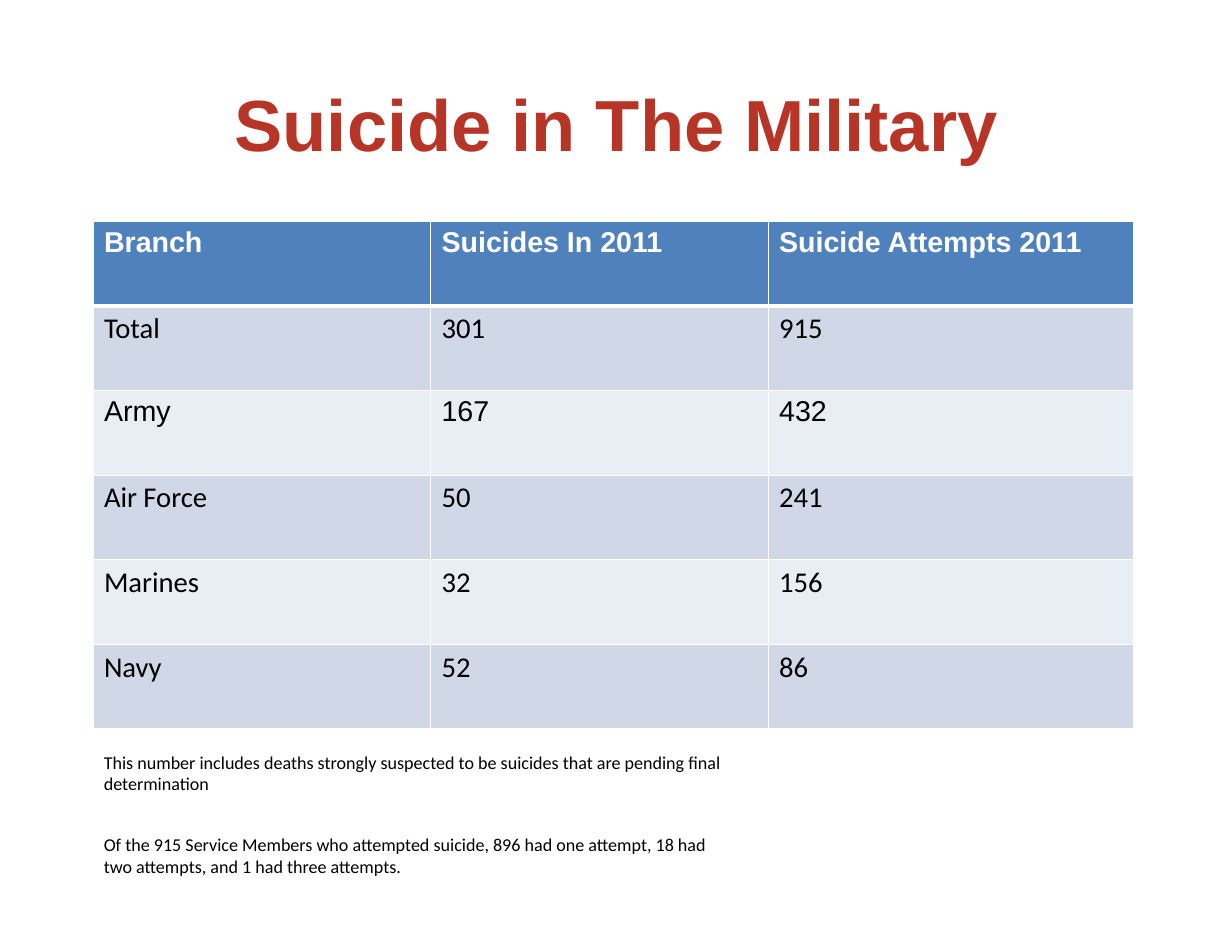
from lxml.etree import SubElement
from pptx import Presentation
from pptx.dml.color import RGBColor
from pptx.enum.text import MSO_ANCHOR, MSO_AUTO_SIZE, PP_ALIGN
from pptx.oxml.ns import qn
from pptx.util import Cm, Pt

COLORS = {
    "title": "B73526",
    "header": "4F81BD",
    "band_dark": "D0D8E8",
    "band_light": "E9EDF4",
    "text": "000000",
    "white": "FFFFFF",
}
BRANCH_ROWS = [
    ("Branch", "Suicides In 2011", "Suicide Attempts 2011"),
    ("Total", "301", "915"),
    ("Army", "167", "432"),
    ("Air Force", "50", "241"),
    ("Marines", "32", "156"),
    ("Navy", "52", "86"),
]
COLUMN_WIDTHS = (7.9, 7.9, 8.55)
ROW_HEIGHT = 1.98
LEFT = 2.18
NOTES = [
    (17.45, 15.11, "This number includes deaths strongly suspected to be suicides "
                   "that are pending final\ndetermination"),
    (19.38, 14.81, "Of the 915 Service Members who attempted suicide, 896 had one "
                   "attempt, 18 had\ntwo attempts, and 1 had three attempts."),
]


class PageBuilder:
    """Holds the text style and the current page."""

    def __init__(self, page):
        self.page = page
        self.heading_font = "Arial"
        self.body_font = "Calibri"

    def format_text(self, frame, name, size, color, bold=False):
        """Format every run of a text frame."""
        for para in frame.paragraphs:
            for span in para.runs:
                span.font.name = name
                span.font.size = Pt(size)
                span.font.bold = bold
                span.font.color.rgb = RGBColor.from_string(COLORS[color])

    def title(self, text, left, top, width, height):
        """Fill and place the title placeholder."""
        box = self.page.shapes.title
        box.left, box.top, box.width, box.height = map(Cm, (left, top, width, height))
        frame = box.text_frame
        frame.text = text
        frame.vertical_anchor = MSO_ANCHOR.MIDDLE
        frame.paragraphs[0].alignment = PP_ALIGN.CENTER
        self.format_text(frame, self.heading_font, 48, "title", bold=True)

    def border(self, cell, bottom_width):
        """Draw white lines around a cell."""
        properties = cell._tc.get_or_add_tcPr()
        widths = {"a:lnL": 1, "a:lnR": 1, "a:lnT": 1, "a:lnB": bottom_width}
        for index, (side, width) in enumerate(widths.items()):
            line = SubElement(properties, qn(side), w=str(Pt(width)))
            fill = SubElement(line, qn("a:solidFill"))
            SubElement(fill, qn("a:srgbClr"), val=COLORS["white"])
            properties.insert(index, line)

    def table(self, rows, left, top, widths, row_height):
        """Add a table with a header and banded rows."""
        table = self.page.shapes.add_table(
            len(rows), len(widths), Cm(left), Cm(top),
            Cm(sum(widths)), Cm(row_height * len(rows))).table
        for column, width in zip(table.columns, widths):
            column.width = Cm(width)
        for number, values in enumerate(rows):
            table.rows[number].height = Cm(row_height)
            is_header = number == 0
            band = "band_dark" if number % 2 else "band_light"
            in_heading_font = is_header or values[0] == "Army"
            for cell, value in zip(table.rows[number].cells, values):
                cell.text_frame.text = value
                cell.fill.solid()
                cell.fill.fore_color.rgb = RGBColor.from_string(
                    COLORS["header" if is_header else band])
                self.border(cell, 3 if is_header else 1)
                self.format_text(
                    cell.text_frame,
                    self.heading_font if in_heading_font else self.body_font,
                    19, "white" if is_header else "text", bold=is_header)

    def note(self, text, left, top, width, height):
        """Add a small text box with one paragraph per line."""
        box = self.page.shapes.add_textbox(*map(Cm, (left, top, width, height)))
        frame = box.text_frame
        frame.text = text
        frame.word_wrap = False
        frame.auto_size = MSO_AUTO_SIZE.SHAPE_TO_FIT_TEXT
        self.format_text(frame, self.body_font, 12, "text")


def main():
    """Build the slide and save the deck."""
    deck = Presentation()
    deck.slide_width, deck.slide_height = Cm(28.83), Cm(22.23)
    builder = PageBuilder(deck.slides.add_slide(deck.slide_layouts[5]))
    builder.title("Suicide in The Military", 1.45, 1.02, 25.96, 3.71)
    builder.table(BRANCH_ROWS, LEFT, 5.18, COLUMN_WIDTHS, ROW_HEIGHT)
    for top, width, text in NOTES:
        builder.note(text, LEFT, top, width, 1.27)
    deck.save("out.pptx")


if __name__ == "__main__":
    main()
